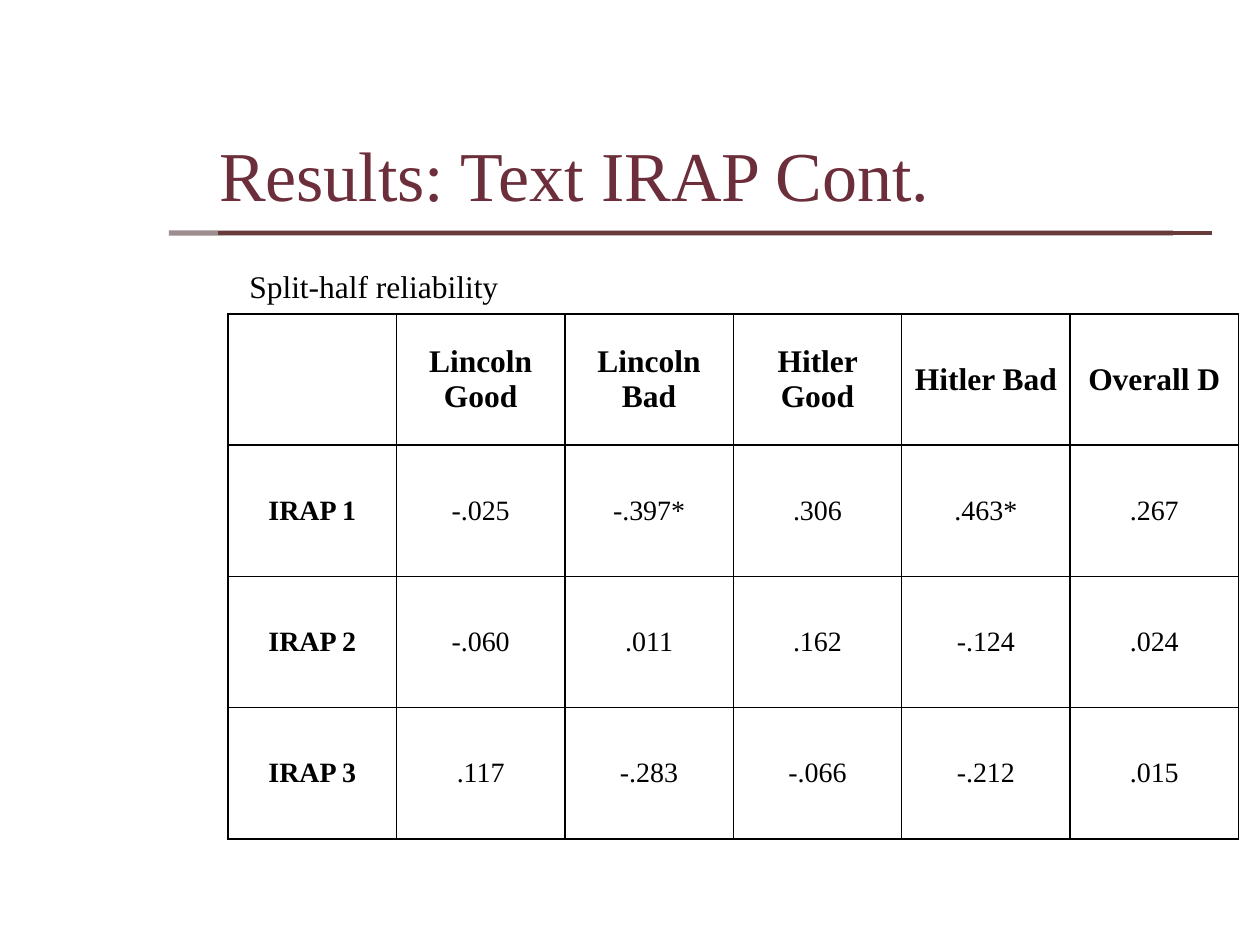
import dataclasses

import pptx
import pptx.dml.color
import pptx.enum.text
import pptx.oxml
import pptx.oxml.ns
import pptx.util

ANCHOR = pptx.enum.text.MSO_ANCHOR
ALIGN = pptx.enum.text.PP_ALIGN


@dataclasses.dataclass(frozen=True)
class Theme:
    font: str = "Times New Roman"
    title_color: str = "6B2E3A"
    text_color: str = "000000"
    back_rule: str = "3C1C21"
    front_rule: str = "683A3C"
    border: str = "000000"
    title_size: int = 40
    body_size: int = 18
    value_size: int = 16
    line_spacing: float = 0.9


THEME = Theme()
SLIDE_WIDTH = pptx.util.Inches(10)
SLIDE_HEIGHT = pptx.util.Inches(7.5)

RELIABILITY = [
    ["", "Lincoln Good", "Lincoln Bad", "Hitler Good", "Hitler Bad", "Overall D"],
    ["IRAP 1", "-.025", "-.397*", ".306", ".463*", ".267"],
    ["IRAP 2", "-.060", ".011", ".162", "-.124", ".024"],
    ["IRAP 3", ".117", "-.283", "-.066", "-.212", ".015"],
]


def across(percent):
    return round(SLIDE_WIDTH * percent / 100)


def down(percent):
    return round(SLIDE_HEIGHT * percent / 100)


def rgb(color):
    return pptx.dml.color.RGBColor.from_string(color)


def apply(target, formats):
    for attribute, value in formats.items():
        setattr(target, attribute, value)


def style_font(font, size, color, bold=False):
    apply(font, {"name": THEME.font, "size": pptx.util.Pt(size), "bold": bold})
    font.color.rgb = rgb(color)


def add_rule(slide, start, end, height, color, weight, opacity=100):
    """Draw a horizontal rule; start, end and height are percent of the slide."""
    rule = slide.shapes.add_connector(
        pptx.enum.shapes.MSO_CONNECTOR.STRAIGHT,
        across(start), down(height), across(end), down(height))
    rule.line.width = pptx.util.Pt(weight)
    rule.line.color.rgb = rgb(color)
    if opacity < 100:
        tint = rule.line.color._xFill.find(pptx.oxml.ns.qn("a:srgbClr"))
        pptx.oxml.ns.qn("a:alpha")
        alpha = tint.makeelement(pptx.oxml.ns.qn("a:alpha"), {"val": str(opacity * 1000)})
        tint.append(alpha)
    properties = rule._element.spPr
    properties.append(properties.makeelement(pptx.oxml.ns.qn("a:effectLst"), {}))


def add_text(slide, text, left, top, width, height, size, color, frame_formats):
    box = slide.shapes.add_textbox(across(left), down(top), across(width), down(height))
    frame = box.text_frame
    apply(frame, {"word_wrap": True, **frame_formats})
    paragraph = frame.paragraphs[0]
    paragraph.text = text
    paragraph.line_spacing = THEME.line_spacing
    style_font(paragraph.runs[0].font, size, color)


def add_borders(cell, color, weight):
    properties = cell._tc.get_or_add_tcPr()
    for index, side in enumerate(("lnL", "lnR", "lnT", "lnB")):
        border = pptx.oxml.parse_xml(
            f'<a:{side} {pptx.oxml.ns.nsdecls("a")} w="{pptx.util.Pt(weight)}">'
            f'<a:solidFill><a:srgbClr val="{color}"/></a:solidFill>'
            f'<a:prstDash val="solid"/></a:{side}>')
        properties.insert(index, border)


def add_reliability_table(slide, left, top, width, height):
    rows, columns = len(RELIABILITY), len(RELIABILITY[0])
    table = slide.shapes.add_table(
        rows, columns, across(left), down(top), across(width), down(height)).table
    apply(table, {"first_row": False, "horz_banding": False})
    for row_index, row in enumerate(RELIABILITY):
        for column_index, text in enumerate(row):
            cell = table.cell(row_index, column_index)
            cell.fill.background()
            add_borders(cell, THEME.border, 1)
            cell.vertical_anchor = ANCHOR.MIDDLE
            paragraph = cell.text_frame.paragraphs[0]
            apply(paragraph, {"text": text, "alignment": ALIGN.CENTER})
            is_header = row_index == 0
            size = THEME.body_size if is_header else THEME.value_size
            style_font(paragraph.font, size, THEME.text_color,
                       bold=is_header or column_index == 0)


def main():
    presentation = pptx.Presentation()
    apply(presentation, {"slide_width": SLIDE_WIDTH, "slide_height": SLIDE_HEIGHT})
    slide = presentation.slides.add_slide(presentation.slide_layouts[6])

    add_rule(slide, 13.4, 93.1, 24.67, THEME.back_rule, 3, opacity=50)
    add_rule(slide, 17.3, 96.2, 24.67, THEME.front_rule, 2.5)
    add_text(slide, "Results: Text IRAP Cont.", 16.4, 5.33, 76.7, 19.33,
             THEME.title_size, THEME.title_color,
             {"vertical_anchor": ANCHOR.BOTTOM, "margin_bottom": down(1.7)})
    add_text(slide, "Split-half reliability", 18.8, 28, 71.9, 68.27,
             THEME.body_size, THEME.text_color, {"vertical_anchor": ANCHOR.TOP})
    add_reliability_table(slide, 18.1, 33.2, 80.2, 55.6)

    presentation.save("out.pptx")


if __name__ == "__main__":
    main()
